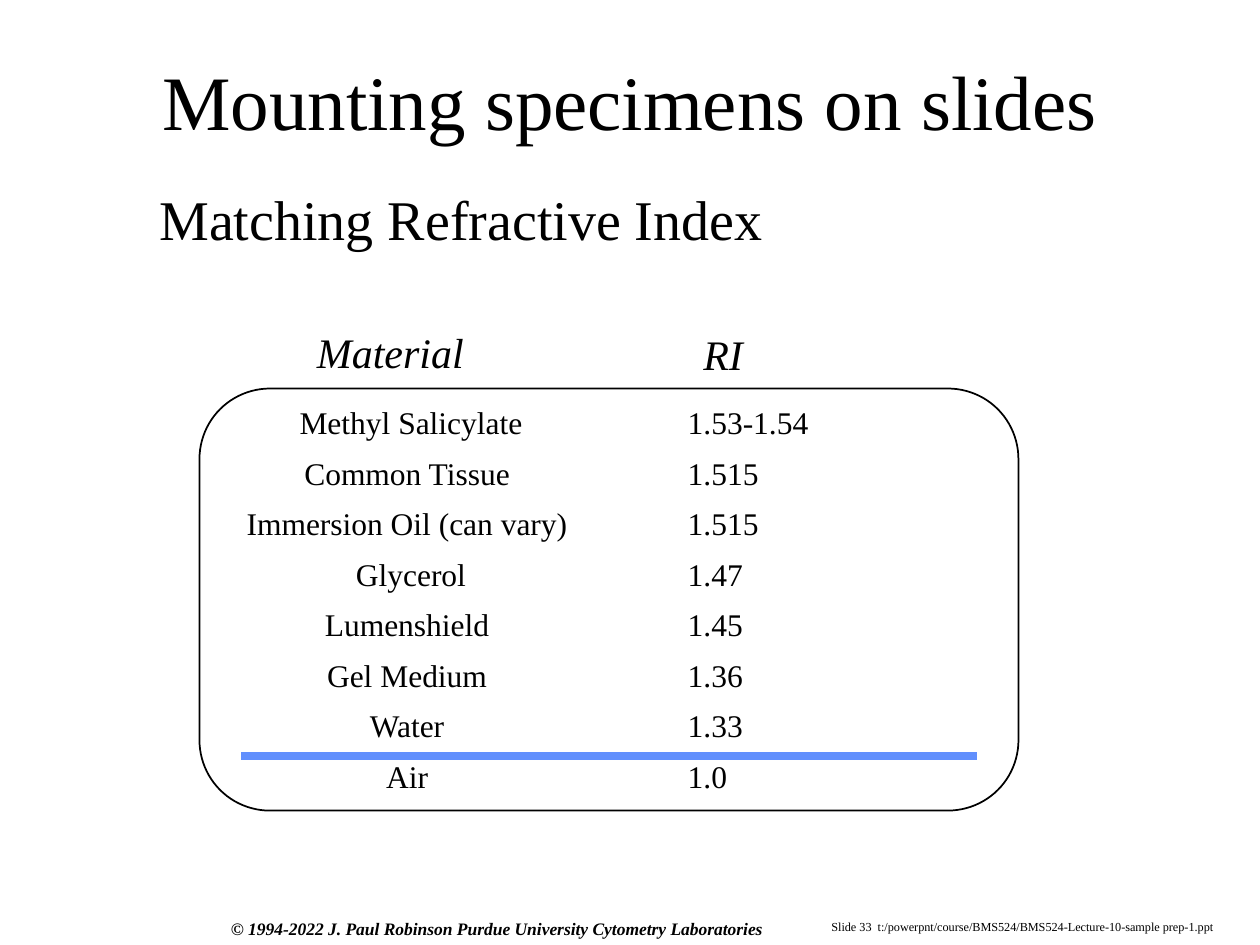
from pptx import Presentation
from pptx.dml.color import RGBColor
from pptx.enum.shapes import MSO_CONNECTOR, MSO_SHAPE
from pptx.enum.text import MSO_ANCHOR, PP_ALIGN
from pptx.oxml.ns import qn
from pptx.util import Inches, Pt
from lxml.etree import SubElement

BLACK = RGBColor(0x00, 0x00, 0x00)
BLUE = RGBColor(0x61, 0x8F, 0xFD)
FONT = "Times New Roman"
UNITS_PER_INCH = 12
ROW_HEIGHT = 4.8
COLUMN_WIDTHS = (50.3, 40.4)
MATERIALS = [
    ("Methyl Salicylate", "1.53-1.54"),
    ("Common Tissue ", "1.515"),
    ("Immersion Oil (can vary) ", "1.515"),
    ("Glycerol", "1.47"),
    ("Lumenshield ", "1.45"),
    ("Gel Medium ", "1.36"),
    ("Water ", "1.33"),
    ("Air ", "1.0"),
]


def grid(units):
    return Inches(units / UNITS_PER_INCH)


def write(frame, text, size, align=PP_ALIGN.LEFT, bold=False, italic=False):
    paragraph = frame.paragraphs[0]
    paragraph.text = text
    paragraph.alignment = align
    font = paragraph.font
    font.name = FONT
    font.size = Pt(size)
    font.bold = bold
    font.italic = italic
    font.color.rgb = BLACK


def add_text(slide, box, text, size, wrap=False, anchor=MSO_ANCHOR.TOP, **style):
    frame = slide.shapes.add_textbox(*map(grid, box)).text_frame
    frame.word_wrap = wrap
    frame.vertical_anchor = anchor
    write(frame, text, size, **style)


def add_materials(slide, left, top):
    width = sum(COLUMN_WIDTHS)
    height = ROW_HEIGHT * len(MATERIALS)
    table = slide.shapes.add_table(
        len(MATERIALS), len(COLUMN_WIDTHS),
        grid(left), grid(top), grid(width), grid(height),
    ).table
    table.first_row = False
    table.horz_banding = False
    for column, column_width in zip(table.columns, COLUMN_WIDTHS):
        column.width = grid(column_width)
    for row, values in zip(table.rows, MATERIALS):
        row.height = grid(ROW_HEIGHT)
        for cell, value, align in zip(row.cells, values, (PP_ALIGN.CENTER, PP_ALIGN.LEFT)):
            cell.fill.background()
            cell.vertical_anchor = MSO_ANCHOR.MIDDLE
            write(cell.text_frame, value, 18, align)


def add_divider(slide, left, right, top):
    divider = slide.shapes.add_connector(
        MSO_CONNECTOR.STRAIGHT, grid(left), grid(top), grid(right), grid(top)
    )
    divider.line.color.rgb = BLUE
    divider.line.width = Pt(4.5)
    SubElement(divider._element.spPr, qn("a:effectLst"))


def add_frame(slide, box):
    shape = slide.shapes.add_shape(MSO_SHAPE.ROUNDED_RECTANGLE, *map(grid, box))
    shape.adjustments[0] = 0.167
    shape.shadow.inherit = False
    shape.fill.background()
    shape.line.color.rgb = BLACK
    shape.line.width = Pt(1)


def main():
    presentation = Presentation()
    presentation.slide_width = Inches(10)
    presentation.slide_height = Inches(7.5)
    slide = presentation.slides.add_slide(presentation.slide_layouts[6])

    add_text(slide, (78, 87, 39.7, 2.6),
             "Slide 33  t:/powerpnt/course/BMS524/BMS524-Lecture-10-sample prep-1.ppt", 7)
    add_text(slide, (20.8, 86.8, 53.6, 3.2),
             "© 1994-2022 J. Paul Robinson Purdue University Cytometry Laboratories",
             10, bold=True, italic=True)
    add_text(slide, (8, 2, 104, 15), "Mounting specimens on slides", 44,
             wrap=True, anchor=MSO_ANCHOR.MIDDLE, align=PP_ALIGN.CENTER)
    add_text(slide, (14, 17, 90.7, 59), "Matching Refractive Index", 32, wrap=True)
    add_materials(slide, 14, 38)
    add_divider(slide, 23, 93, 72)
    add_frame(slide, (19, 37, 78, 40.2))
    add_text(slide, (29, 30.5, 16.6, 6), "Material", 24, italic=True)
    add_text(slide, (65.8, 30.7, 6.2, 6), "RI", 24, italic=True)

    presentation.save("out.pptx")


if __name__ == "__main__":
    main()
